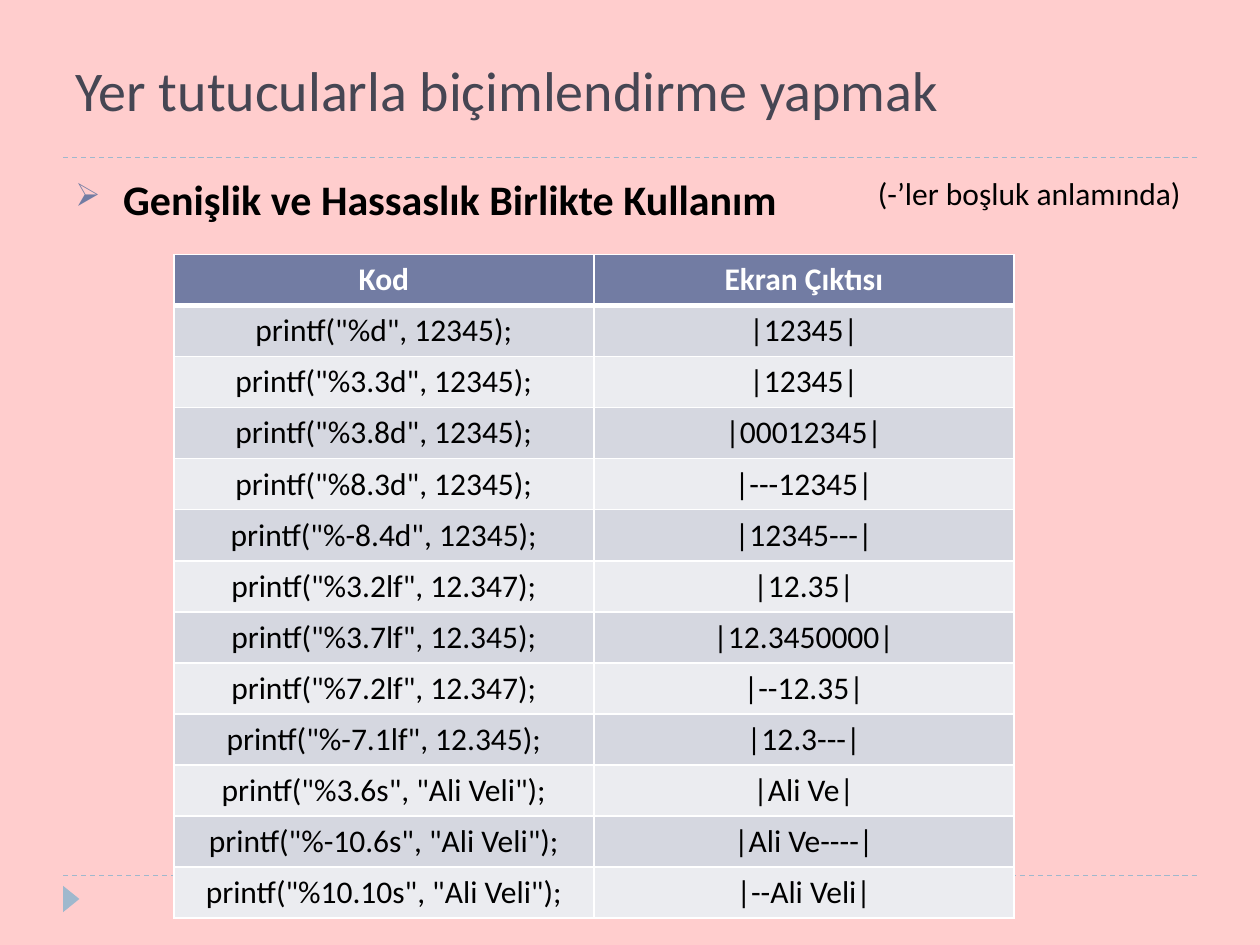
from dataclasses import dataclass

from lxml.etree import SubElement
from pptx import Presentation
from pptx.dml.color import RGBColor
from pptx.enum.dml import MSO_LINE_DASH_STYLE as Dash
from pptx.enum.shapes import MSO_CONNECTOR as Connector, MSO_SHAPE as Shape
from pptx.enum.text import MSO_ANCHOR as Anchor, PP_ALIGN as Align
from pptx.oxml.ns import qn
from pptx.util import Inches, Pt

COLORS = {
    "background": "FFCDCD", "title": "464653", "text": "000000",
    "accent": "727CA3", "rule": "9FB8CD", "white": "FFFFFF",
    "odd": "D5D7E0", "even": "EBECF0",
}
WIDTH, HEIGHT, MARGIN = 10, 7.5, 0.5
FONT = "Calibri"
TITLE_ONLY = 5


@dataclass
class Area:
    left: float
    top: float
    width: float
    height: float

    def lengths(self) -> tuple:
        return tuple(Inches(v) for v in (self.left, self.top, self.width, self.height))


@dataclass
class Style:
    size: float
    color: str
    bold: bool = False
    align: Align = Align.LEFT


@dataclass
class Example:
    code: str
    output: str


TITLE_STYLE = Style(32, "title")
HEADING_STYLE = Style(24, "text", True)
NOTE_STYLE = Style(18, "text")
HEADER_STYLE = Style(18, "white", True, Align.CENTER)
CELL_STYLE = Style(18, "text", False, Align.CENTER)

CONTENT = Area(MARGIN, 1.33, WIDTH - 2 * MARGIN, 5.4)
TITLE_AREA = Area(MARGIN, 0.17, CONTENT.width, 1.08)
NOTE_AREA = Area(6.87, CONTENT.top, 2.63, 0.4)
TABLE_AREA = Area(1.38, 2.02, WIDTH * 2 / 3, 5.27)
RULE_TOPS = (6.95, 1.25)

HEADER = Example("Kod", "Ekran Çıktısı")
EXAMPLES = [
    Example('printf("%d", 12345);', "|12345|"),
    Example('printf("%3.3d", 12345);', "|12345|"),
    Example('printf("%3.8d", 12345);', "|00012345|"),
    Example('printf("%8.3d", 12345);', "|---12345|"),
    Example('printf("%-8.4d", 12345);', "|12345---|"),
    Example('printf("%3.2lf", 12.347);', "|12.35|"),
    Example('printf("%3.7lf", 12.345);', "|12.3450000|"),
    Example('printf("%7.2lf", 12.347);', "|--12.35|"),
    Example('printf("%-7.1lf", 12.345);', "|12.3---|"),
    Example('printf("%3.6s", "Ali Veli");', "|Ali Ve|"),
    Example('printf("%-10.6s", "Ali Veli");', "|Ali Ve----|"),
    Example('printf("%10.10s", "Ali Veli");', "|--Ali Veli|"),
]


def rgb(name: str) -> RGBColor:
    return RGBColor.from_string(COLORS[name])


def write(frame, text: str, style: Style):
    """Put one formatted paragraph in a text frame and return it."""
    para = frame.paragraphs[0]
    para.alignment = style.align
    span = para.add_run()
    span.text = text
    values = {"name": FONT, "size": Pt(style.size), "bold": style.bold}
    for name, value in values.items():
        setattr(span.font, name, value)
    span.font.color.rgb = rgb(style.color)
    return para


def add_text(page, area: Area, text: str, style: Style):
    box = page.shapes.add_textbox(*area.lengths())
    box.text_frame.word_wrap = True
    return write(box.text_frame, text, style)


def add_bullet(para, symbol: str, color: str, percent: int, indent: float) -> None:
    props = para._p.get_or_add_pPr()
    props.set("marL", str(Inches(indent)))
    props.set("indent", str(-Inches(indent)))
    fill = SubElement(props, qn("a:buClr"))
    SubElement(fill, qn("a:srgbClr"), val=COLORS[color])
    SubElement(props, qn("a:buSzPct"), val=str(percent * 1000))
    SubElement(props, qn("a:buChar"), char=symbol)


def add_rule(page, top: float) -> None:
    ends = (MARGIN, top, WIDTH - MARGIN, top)
    rule = page.shapes.add_connector(Connector.STRAIGHT, *map(Inches, ends))
    rule.line.color.rgb = rgb("rule")
    rule.line.width = Pt(0.75)
    rule.line.dash_style = Dash.DASH
    SubElement(rule._element.spPr, qn("a:effectLst"))


def add_marker(page, area: Area) -> None:
    marker = page.shapes.add_shape(Shape.ISOSCELES_TRIANGLE, *area.lengths())
    marker.rotation = 90
    marker.shadow.inherit = False
    marker.fill.solid()
    marker.fill.fore_color.rgb = rgb("rule")
    marker.line.fill.background()


def set_borders(cell, widths: dict) -> None:
    props = cell._tc.get_or_add_tcPr()
    for index, (side, width) in enumerate(widths.items()):
        line = props.makeelement(qn(f"a:ln{side}"), {"w": str(Pt(width))})
        fill = SubElement(line, qn("a:solidFill"))
        SubElement(fill, qn("a:srgbClr"), val=COLORS["white"])
        props.insert(index, line)


def add_examples(page, area: Area) -> None:
    rows = [HEADER, *EXAMPLES]
    table = page.shapes.add_table(len(rows), 2, *area.lengths()).table
    for row, example in enumerate(rows):
        table.rows[row].height = Inches(area.height / len(rows))
        style = CELL_STYLE if row else HEADER_STYLE
        fill = ("even", "odd")[row % 2] if row else "accent"
        widths = {"L": 1, "R": 1, "T": 3 if row == 1 else 1, "B": 1 if row else 3}
        for column, text in enumerate((example.code, example.output)):
            cell = table.cell(row, column)
            cell.fill.solid()
            cell.fill.fore_color.rgb = rgb(fill)
            set_borders(cell, widths)
            write(cell.text_frame, text, style)


def main() -> None:
    deck = Presentation()
    deck.slide_width, deck.slide_height = Inches(WIDTH), Inches(HEIGHT)
    page = deck.slides.add_slide(deck.slide_layouts[TITLE_ONLY])
    page.background.fill.solid()
    page.background.fill.fore_color.rgb = rgb("background")

    # Rules and corner marker
    for top in RULE_TOPS:
        add_rule(page, top)
    add_marker(page, Area(0.46, 7.07, 0.21, 0.13))

    # Title
    title = page.shapes.title
    for name, value in zip(("left", "top", "width", "height"), TITLE_AREA.lengths()):
        setattr(title, name, value)
    title.text_frame.vertical_anchor = Anchor.MIDDLE
    write(title.text_frame, "Yer tutucularla biçimlendirme yapmak", TITLE_STYLE)

    # Heading, table and note
    heading = add_text(page, CONTENT, "Genişlik ve Hassaslık Birlikte Kullanım", HEADING_STYLE)
    heading.space_before = Pt(6)
    add_bullet(heading, "➢", "accent", 76, 0.38)
    add_examples(page, TABLE_AREA)
    add_text(page, NOTE_AREA, "(-’ler boşluk anlamında)", NOTE_STYLE)

    deck.save("out.pptx")


if __name__ == "__main__":
    main()
